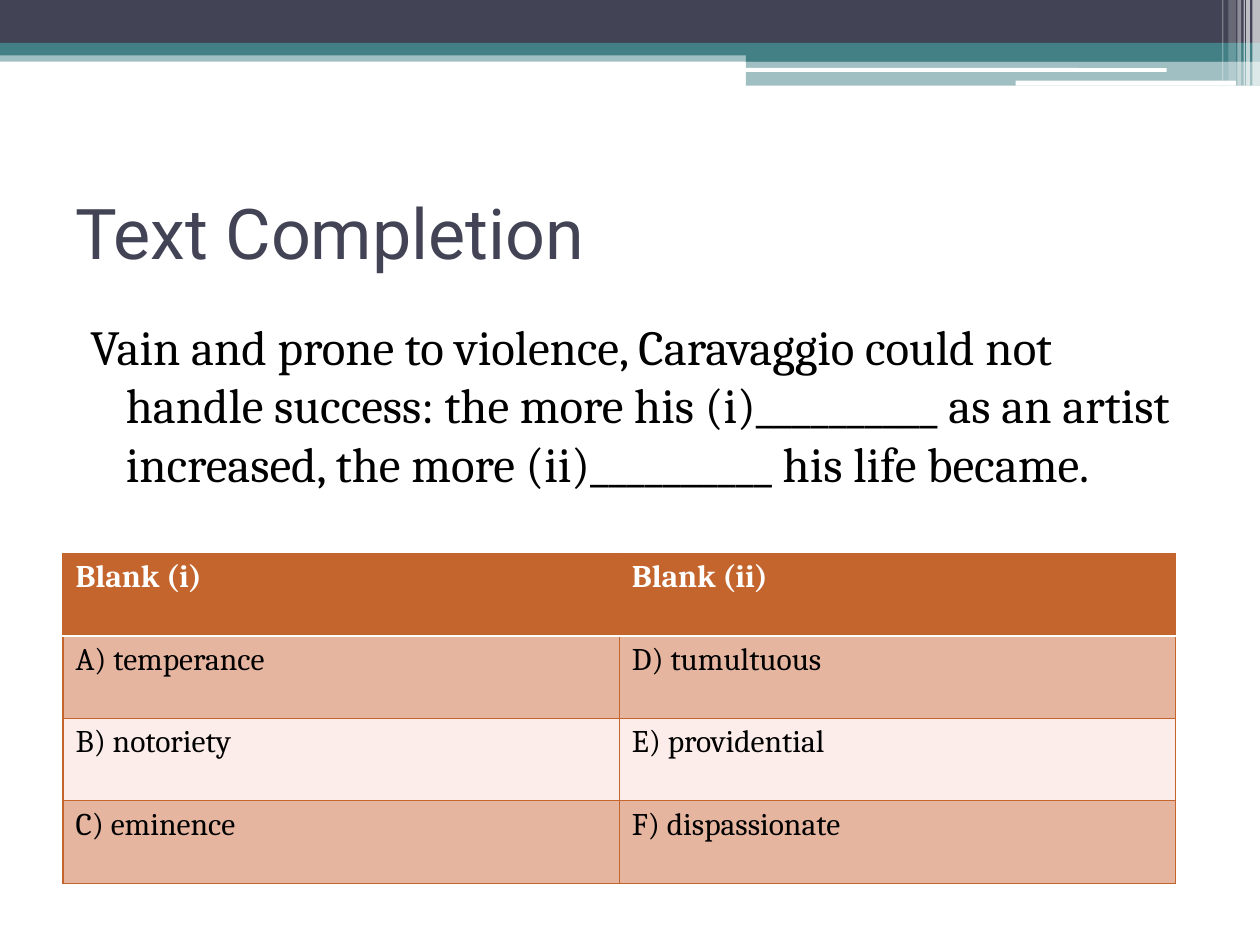
from lxml.etree import SubElement
from pptx import Presentation
from pptx.dml.color import RGBColor
from pptx.enum.shapes import MSO_SHAPE
from pptx.enum.text import MSO_ANCHOR
from pptx.oxml.ns import qn
from pptx.util import Inches, Pt

NAVY, TEAL, RUST = "424456", "438086", "C4652D"
WHITE, BLACK = "FFFFFF", "000000"
BAND_DARK, BAND_LIGHT = "E5B5A0", "FDEDEA"

# left, top, width, height, colour, opacity in percent
BANDS = [
    (0, 0.4, 10, 0.09, TEAL, 50),
    (0, 0, 10, 0.34, NAVY, 100),
    (0, 0.34, 10, 0.1, TEAL, 100),
    (5.92, 0.39, 4.08, 0.1, TEAL, 100),
    (5.92, 0.48, 4.08, 0.2, TEAL, 50),
]
HIGHLIGHTS = [(5.91, 0.54, 3.35, 0.03), (8.06, 0.64, 1.75, 0.04)]
# left, width, height, opacity in percent
STRIPES = [
    (9.94, 0.06, 0.68, 65),
    (9.89, 0.03, 0.68, 65),
    (9.87, 0.01, 0.68, 60),
    (9.82, 0.03, 0.68, 40),
    (9.75, 0.06, 0.64, 20),
    (9.7, 0.01, 0.64, 30),
]
QUESTION = (
    "Vain and prone to violence, Caravaggio could not handle success: "
    "the more his (i)__________ as an artist increased, "
    "the more (ii)__________ his life became."
)
CHOICES = [
    ("Blank (i)", "Blank (ii)"),
    ("A) temperance", "D) tumultuous"),
    ("B) notoriety", "E) providential"),
    ("C) eminence", "F) dispassionate"),
]


def rgb(value):
    return RGBColor.from_string(value)


class SlideBuilder:
    title = {"name": "Roboto", "size": Pt(40), "color": NAVY}
    body = {"name": "Cambria", "size": Pt(28), "color": BLACK}
    header = {"name": "Cambria", "size": Pt(18), "bold": True, "color": WHITE}
    choice = {**header, "bold": False, "color": BLACK}

    def __init__(self, slide):
        self.slide = slide

    def add_run(self, p, text, style):
        r = p.add_run()
        r.text = text
        for key, value in style.items():
            if key == "color":
                r.font.color.rgb = rgb(value)
            else:
                setattr(r.font, key, value)

    def box(self, left, top, width, height, color, opacity=100,
            kind=MSO_SHAPE.RECTANGLE):
        sp = self.slide.shapes.add_shape(
            kind, *map(Inches, (left, top, width, height)))
        sp.shadow.inherit = False
        sp.line.fill.background()
        sp.fill.solid()
        sp.fill.fore_color.rgb = rgb(color)
        if opacity < 100:
            clr = sp.fill._xPr.find(qn("a:solidFill"))[0]
            SubElement(clr, qn("a:alpha"), val=str(opacity * 1000))

    def text(self, left, top, width, height, text, style,
             anchor=MSO_ANCHOR.TOP):
        sp = self.slide.shapes.add_textbox(
            *map(Inches, (left, top, width, height)))
        tf = sp.text_frame
        tf.word_wrap = True
        tf.vertical_anchor = anchor
        p = tf.paragraphs[0]
        self.add_run(p, text, style)
        return p

    def hanging_text(self, left, top, width, height, text, style):
        p = self.text(left, top, width, height, text, style)
        p.space_before = Pt(3)
        pPr = p._p.get_or_add_pPr()
        pPr.set("marL", str(Inches(0.4)))
        pPr.set("indent", str(Inches(-0.28)))

    def border(self, cell, side, color, width):
        ln = SubElement(cell._tc.get_or_add_tcPr(), qn("a:ln" + side),
                        w=str(Pt(width)))
        fill = SubElement(ln, qn("a:solidFill"))
        SubElement(fill, qn("a:srgbClr"), val=color)

    def table(self, left, top, width, height, rows):
        table = self.slide.shapes.add_table(
            len(rows), len(rows[0]),
            *map(Inches, (left, top, width, height))).table
        table.horz_banding = False
        for i, row in enumerate(rows):
            style = self.choice if i else self.header
            fill = (BAND_DARK if i % 2 else BAND_LIGHT) if i else RUST
            white_side = {0: "B", 1: "T"}.get(i)
            for j, text in enumerate(row):
                cell = table.cell(i, j)
                for side in "LRTB":
                    line = (WHITE, 1.5) if side == white_side else (RUST, 0.75)
                    self.border(cell, side, *line)
                cell.fill.solid()
                cell.fill.fore_color.rgb = rgb(fill)
                self.add_run(cell.text_frame.paragraphs[0], text, style)


def main():
    prs = Presentation()
    prs.slide_width, prs.slide_height = Inches(10), Inches(7.5)
    s = SlideBuilder(prs.slides.add_slide(prs.slide_layouts[6]))
    for band in BANDS:
        s.box(*band)
    for highlight in HIGHLIGHTS:
        s.box(*highlight, WHITE, kind=MSO_SHAPE.ROUNDED_RECTANGLE)
    for left, width, height, opacity in STRIPES:
        s.box(left, 0, width, height, WHITE, opacity)
    s.text(0.5, 1.25, 9, 1.17, "Text Completion", s.title, MSO_ANCHOR.MIDDLE)
    s.hanging_text(0.5, 2.46, 9, 4.73, QUESTION, s.body)
    s.table(0.5, 4.39, 8.83, 2.62, CHOICES)
    prs.save("out.pptx")


if __name__ == "__main__":
    main()
